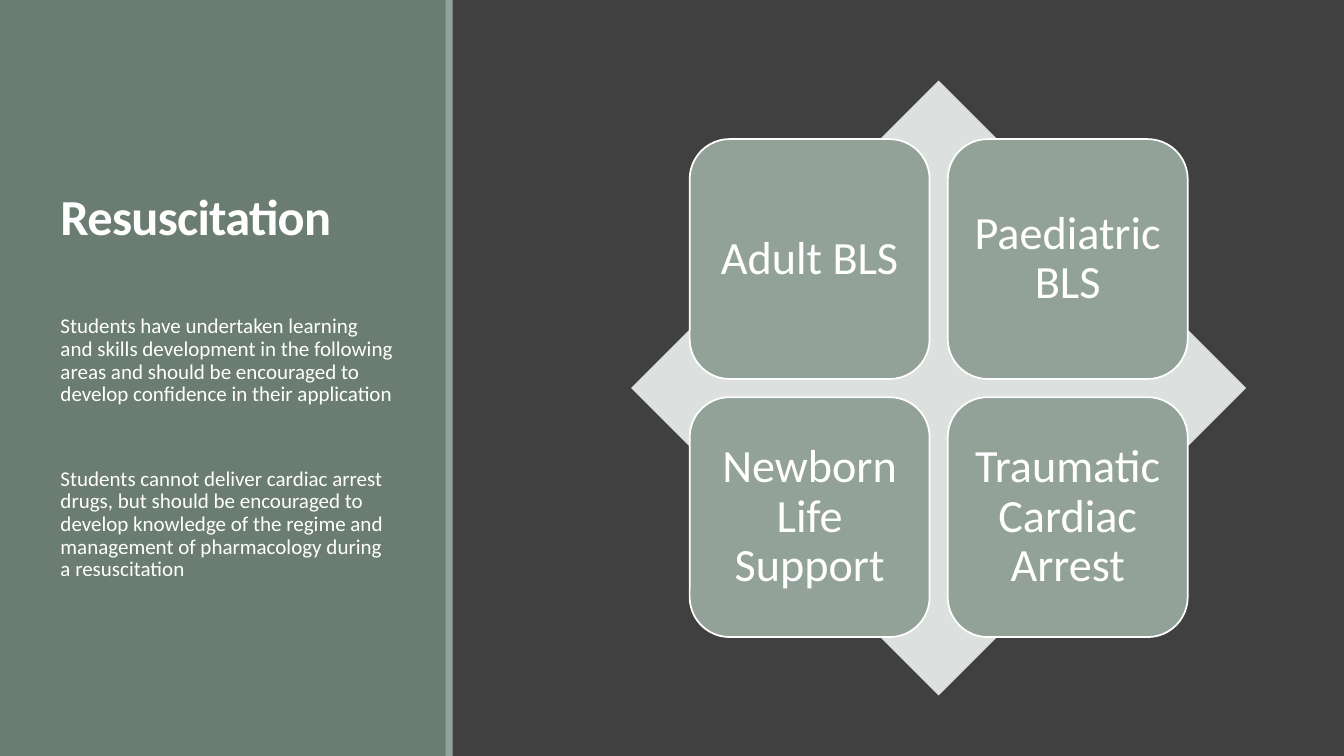
from pptx import Presentation
from pptx.dml.color import RGBColor
from pptx.enum.shapes import MSO_SHAPE
from pptx.enum.text import MSO_ANCHOR, MSO_AUTO_SIZE, PP_ALIGN
from pptx.util import Inches, Pt
from lxml import etree

FONT = "Calibri"
WHITE, SAGE, MOSS, MIST, CHARCOAL = "FFFFFF", "93A299", "6B7D72", "DCE0DE", "404040"

BODY = [
    "Students have undertaken learning and skills development in the following "
    "areas and should be encouraged to develop confidence in their application",
    "Students cannot deliver cardiac arrest drugs, but should be encouraged to "
    "develop knowledge of the regime and management of pharmacology during a resuscitation",
]
TOPICS = [
    ["Adult BLS", "Paediatric BLS"],
    ["Newborn Life Support", "Traumatic Cardiac Arrest"],
]


def rgb(value):
    return RGBColor.from_string(value)


def add_block(slide, kind, x, y, w, h, fill, line=None):
    sp = slide.shapes.add_shape(kind, Inches(x), Inches(y), Inches(w), Inches(h))
    sp.shadow.inherit = False
    sp.fill.solid()
    sp.fill.fore_color.rgb = rgb(fill)
    if line:
        sp.line.color.rgb = rgb(line)
        sp.line.width = Pt(1.25)
    else:
        sp.line.fill.background()
    return sp


def place(sp, x, y, w, h, anchor):
    sp.left, sp.top, sp.width, sp.height = (Inches(v) for v in (x, y, w, h))
    tf = sp.text_frame
    tf.word_wrap = True
    tf.auto_size = MSO_AUTO_SIZE.NONE
    tf.vertical_anchor = anchor
    return tf


def write(p, text, size, align, spacing, bold=False):
    p.alignment = align
    p.line_spacing = spacing
    r = p.add_run()
    r.text = text
    r.font.name = FONT
    r.font.size = Pt(size)
    r.font.bold = bold
    r.font.color.rgb = rgb(WHITE)
    return r


def remove_bullet(p):
    pPr = p._p.get_or_add_pPr()
    pPr.set("marL", "0")
    pPr.set("indent", "0")
    ns = pPr.nsmap["a"]
    etree.SubElement(pPr, f"{{{ns}}}buNone")


def add_side_panel(slide, x, y, w, h):
    # Panel and its edge strip
    add_block(slide, MSO_SHAPE.RECTANGLE, x, y, w, h, MOSS)
    add_block(slide, MSO_SHAPE.RECTANGLE, x + w - 0.01, y, 0.07, h, SAGE)

    # Title
    tf = place(slide.shapes.title, x + 0.5, y + 0.65, 3.5, 1.84, MSO_ANCHOR.BOTTOM)
    r = write(tf.paragraphs[0], "Resuscitation", 36, PP_ALIGN.LEFT, 0.85, bold=True)
    r.font._element.set("spc", "-50")

    # Body text
    tf = place(slide.placeholders[1], x + 0.5, y + 3.08, 3.5, 3.22, MSO_ANCHOR.TOP)
    for i, text in enumerate(BODY):
        p = tf.add_paragraph() if i else tf.paragraphs[0]
        write(p, text, 15, PP_ALIGN.LEFT, 0.9)
        p.space_before = Pt(42 if i else 0)
        p.space_after = Pt(2)
        remove_bullet(p)


def add_topic_matrix(slide, x, y, size):
    # Diamond behind the tiles
    add_block(slide, MSO_SHAPE.DIAMOND, x, y, size, size, MIST)

    # Two by two tiles, centred on the diamond
    tile, gap = 2.38, 0.18
    margin = (size - 2 * tile - gap) / 2
    for row, topics in enumerate(TOPICS):
        for col, topic in enumerate(topics):
            sp = add_block(slide, MSO_SHAPE.ROUNDED_RECTANGLE,
                           x + margin + col * (tile + gap),
                           y + margin + row * (tile + gap),
                           tile, tile, SAGE, WHITE)
            tf = sp.text_frame
            tf.word_wrap = True
            tf.vertical_anchor = MSO_ANCHOR.MIDDLE
            tf.margin_left = tf.margin_right = Inches(0.12)
            tf.margin_top = tf.margin_bottom = Inches(0.12)
            write(tf.paragraphs[0], topic, 33, PP_ALIGN.CENTER, 0.9)


def main():
    prs = Presentation()
    prs.slide_width, prs.slide_height = Inches(13.33), Inches(7.5)
    slide = prs.slides.add_slide(prs.slide_layouts[1])
    slide.background.fill.solid()
    slide.background.fill.fore_color.rgb = rgb(CHARCOAL)

    add_side_panel(slide, 0, 0, 4.43, 7.5)
    add_topic_matrix(slide, 6.26, 0.8, 6.1)

    # Bring the placeholders in front of the panel
    for sp in list(slide.placeholders):
        slide.shapes._spTree.append(sp._element)
    prs.save("out.pptx")


if __name__ == "__main__":
    main()
